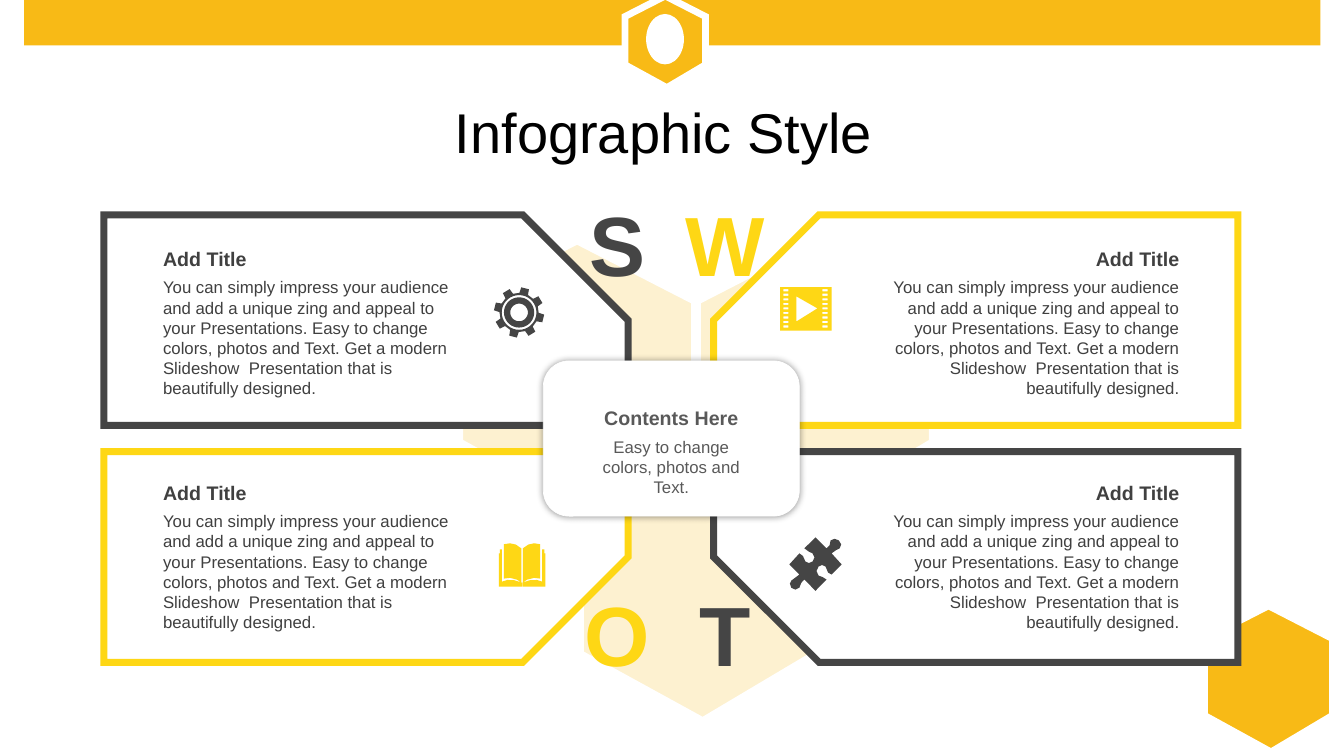
from math import cos, radians, sin

from lxml import etree
from pptx import Presentation
from pptx.dml.color import RGBColor
from pptx.enum.shapes import MSO_SHAPE
from pptx.enum.text import MSO_ANCHOR, PP_ALIGN
from pptx.oxml.ns import qn
from pptx.util import Pt

RECT, SNIP, ROUND = MSO_SHAPE.RECTANGLE, MSO_SHAPE.SNIP_1_RECTANGLE, MSO_SHAPE.ROUNDED_RECTANGLE
OVAL = MSO_SHAPE.OVAL
LEFT, CENTER, RIGHT = PP_ALIGN.LEFT, PP_ALIGN.CENTER, PP_ALIGN.RIGHT
TOP, MIDDLE = MSO_ANCHOR.TOP, MSO_ANCHOR.MIDDLE

# Content
TITLE = "Infographic Style"
PANEL_TITLE = "Add Title"
PANEL_BODY = ("You can simply impress your audience and add a unique zing and appeal to your "
              "Presentations. Easy to change colors, photos and Text. Get a modern "
              "Slideshow  Presentation that is beautifully designed.")
HUB_TITLE = "Contents Here"
HUB_BODY = "Easy to change colors, photos and Text."
# letter, column, row, colour, icon, icon position
PANELS = [
    ("S", 0, 0, "dark", "gear", (352.8, 205.2)),
    ("W", 1, 0, "yellow", "film", (557.3, 205.2)),
    ("O", 0, 1, "yellow", "book", (356.4, 388.1)),
    ("T", 1, 1, "dark", "puzzle", (563.8, 383.8)),
]
WATERMARK_HEXAGONS = [(498.2, 172.1), (328.3, 172.1), (414.7, 323.3)]

THEME = {
    "font": "Arial", "title": 40, "letter": 60, "heading": 14, "body": 12,
    "honey": "F8BA16", "yellow": "FED715", "dark": "454545", "white": "FFFFFF",
    "black": "000000", "text": "404040", "hub": "595959",
}

# Outlines
HEXAGON = [(.5, 0), (0, .225), (0, .75), (.52, 1), (1, .75), (1, .225)]
BOOK_COVER = [(0, 7.2), (.7, 7.2), (.7, 4.3), (2.2, 4.3), (2.2, 27.4), (6, 26.2),
              (11, 26.4), (16.4, 28.1), (16.4, 31), (0, 31)]
BOOK_PAGE = [(3.6, .7), (7.9, 0), (12, .9), (16, 3.6), (16, 28), (13, 26),
             (8, 24.7), (3.6, 25.2)]
PUZZLE = [
    (37.4, 19.4), (30.2, 26.6), (27.7, 25.2), (25.9, 20.9), (23.4, 19.8), (20.9, 20.9),
    (19.4, 24.1), (20.9, 27.4), (23.8, 28.4), (26.6, 30.2), (18.7, 38.2), (10.8, 30.2),
    (8.6, 32.4), (7.2, 36), (4.3, 37.4), (1.4, 36), (.4, 33.1), (1.4, 31), (4.3, 28.8),
    (7.2, 26.6), (0, 19.4), (7.2, 11.5), (9.7, 13.3), (11.5, 17.3), (14, 18.4),
    (16.6, 17.3), (18, 14.4), (16.6, 11.5), (13.7, 10.1), (10.8, 7.9), (18.7, 0),
    (26.6, 7.9), (28.8, 5.8), (29.5, 2.2), (32.4, 1.1), (35.3, 2.2), (37.1, 5),
    (36, 7.9), (33.1, 9.4), (30.2, 11.5),
]


def box_outline(x, y, w, h):
    return [(x, y), (x + w, y), (x + w, y + h), (x, y + h)]


def polar(radius, angle, center=18):
    return center + radius * sin(radians(angle)), center - radius * cos(radians(angle))


def gear():
    teeth = [polar(radius, 14 + 45 * tooth + turn) for tooth in range(8)
             for radius, turn in ((14, -13), (18, -9), (18, 9), (14, 13))]
    rings = [[polar(radius, angle) for angle in range(0, 360, 10)] for radius in (12.4, 10.8, 6.3)]
    return [teeth, *rings]


def film():
    holes = [box_outline(x, 1.4 + 3.24 * row, 3.6, 1.5) for x in (2.2, 30.2) for row in range(9)]
    return [box_outline(0, 0, 36.7, 31), [(11.5, 6.5), (11.5, 24.5), (26.6, 15.1)], *holes]


def book():
    halves = [BOOK_COVER, BOOK_PAGE]
    return halves + [[(33.1 - x, y) for x, y in half] for half in halves]


ICONS = {"gear": gear(), "film": film(), "book": book(), "puzzle": [PUZZLE]}

prs = Presentation()
prs.slide_width, prs.slide_height = Pt(960), Pt(540)
slide = prs.slides.add_slide(prs.slide_layouts[6])


def color(name):
    return RGBColor.from_string(THEME[name])


def paint(shape, fill, line=None, width=0):
    shape.shadow.inherit = False
    shape.fill.solid()
    shape.fill.fore_color.rgb = color(fill)
    if line is None:
        shape.line.fill.background()
        return shape
    shape.line.color.rgb = color(line)
    shape.line.width = Pt(width)
    etree.SubElement(shape.line._get_or_add_ln(), qn("a:miter"), lim="800000")
    return shape


def add_box(kind, x, y, w, h, fill, line=None, width=0):
    return paint(slide.shapes.add_shape(kind, Pt(x), Pt(y), Pt(w), Pt(h)), fill, line, width)


def add_outline(contours, x, y, fill, line=None, width=0):
    placed = [[(Pt(x + px), Pt(y + py)) for px, py in contour] for contour in contours]
    builder = slide.shapes.build_freeform(*placed[0][0])
    for number, points in enumerate(placed):
        if number:
            builder.move_to(*points[0])
        builder.add_line_segments(points[1:], close=True)
    return paint(builder.convert_to_shape(), fill, line, width)


def add_hexagon(x, y, w, h):
    return add_outline([[(fx * w, fy * h) for fx, fy in HEXAGON]], x, y, "honey", "white", 4.88)


def add_text(text, x, y, w, h, size, ink, align=LEFT, bold=False, anchor=TOP):
    frame = slide.shapes.add_textbox(Pt(x), Pt(y), Pt(w), Pt(h)).text_frame
    frame.word_wrap = True
    frame.vertical_anchor = anchor
    frame.text = text
    paragraph = frame.paragraphs[0]
    paragraph.alignment = align
    font = paragraph.runs[0].font
    font.name, font.size, font.bold = THEME["font"], Pt(THEME[size]), bold
    font.color.rgb = color(ink)


# Header band, emblem and background hexagons
add_box(RECT, 17.3, 0, 925.9, 32.4, "honey")
add_hexagon(446.4, -2.9, 57.6, 65.5)
for x, y in WATERMARK_HEXAGONS:
    watermark = add_hexagon(x, y, 167.8, 191.5)
    tint = watermark.fill._xPr.find(qn("a:solidFill"))[0]
    etree.SubElement(tint, qn("a:alpha"), val="20000")
add_box(OVAL, 461.5, 10, 27, 36, "white")
add_hexagon(860.4, 432.7, 91.4, 104.4)
add_text(TITLE, 18, 65.5, 911.5, 56.9, "title", "black", CENTER, anchor=MIDDLE)

# Panel frames
for _, column, row, accent, _, _ in PANELS:
    panel = add_box(SNIP, 74.2 + 435.6 * column, 153.4 + 169.2 * row, 374.4, 150.5,
                    "white", accent, 5)
    panel.adjustments[0] = .5
    xfrm = panel._element.spPr.find(qn("a:xfrm"))
    xfrm.set("flipH", str(column))
    xfrm.set("flipV", str(row))

# Central card
hub = add_box(ROUND, 388.1, 257.8, 182.9, 110.9, "white", "white", .5)
effects = hub._element.spPr.find(qn("a:effectLst"))
glow = etree.SubElement(effects, qn("a:outerShdw"), blurRad=str(Pt(5)), dist="0", dir="0",
                        algn="ctr", rotWithShape="0")
shade = etree.SubElement(glow, qn("a:srgbClr"), val=THEME["black"])
etree.SubElement(shade, qn("a:alpha"), val="40000")
add_text(HUB_BODY, 413.3, 308.2, 132.5, 31, "body", "hub", CENTER)
add_text(HUB_TITLE, 413.3, 286.6, 132.5, 20.2, "heading", "hub", CENTER, True)

# Panel letters, texts and icons
for letter, column, row, accent, icon, (icon_x, icon_y) in PANELS:
    add_text(letter, 402.1 + 77 * column, 133.5 + 278.4 * row, 77.8, 79.9,
             "letter", accent, CENTER, True, MIDDLE)
    text_x, text_y = 109.4 + 509.1 * column, 172.8 + 167 * row
    align = RIGHT if column else LEFT
    add_text(PANEL_BODY, text_x, text_y + 21.6, 231.1, 94.3, "body", "text", align)
    add_text(PANEL_TITLE, text_x, text_y, 231.1, 24.5, "heading", "text", align, True)
    add_outline(ICONS[icon], icon_x, icon_y, accent)

prs.save("out.pptx")
